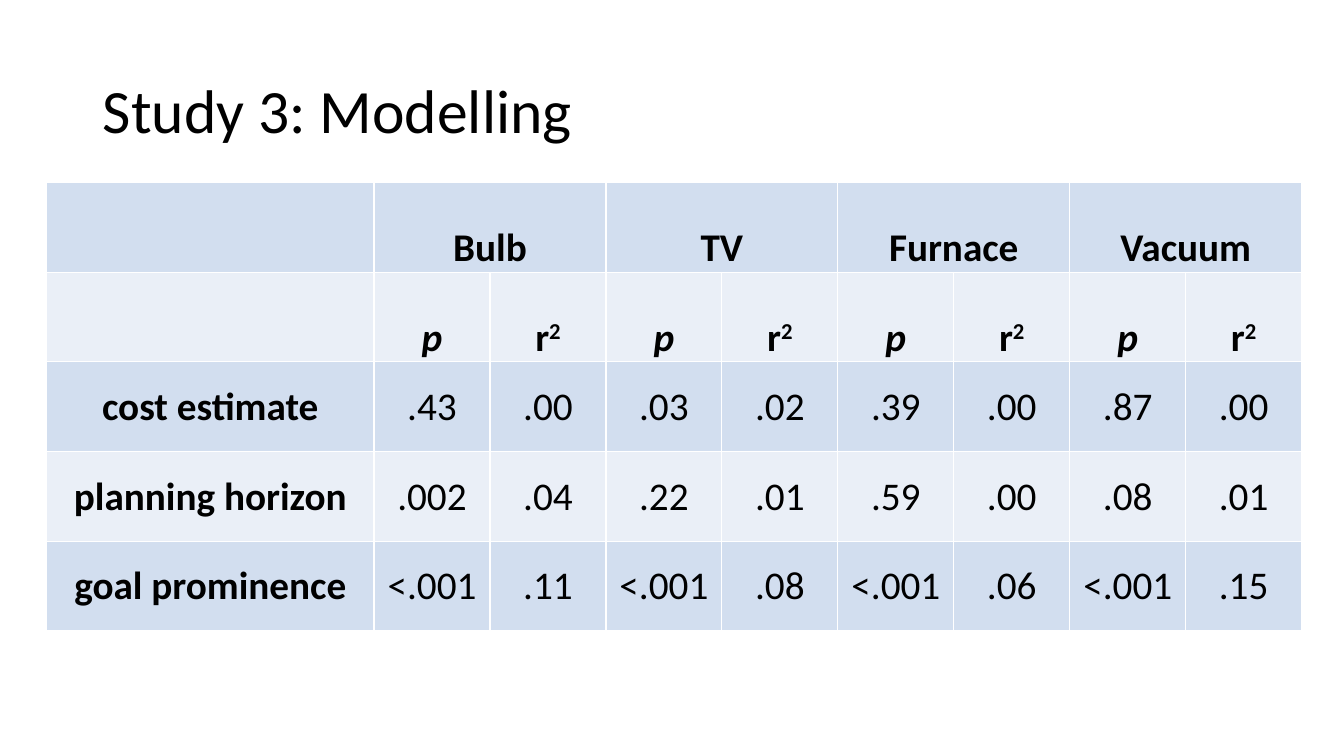
"""Build the Study 3 modelling slide with its table of p and r² values."""
from lxml.etree import SubElement
from pptx import Presentation
from pptx.dml.color import RGBColor
from pptx.enum.text import MSO_ANCHOR, PP_ALIGN
from pptx.oxml.ns import qn
from pptx.util import Pt

PX = 9144
COLORS = {"text": "000000", "border": "FFFFFF", "odd": "D2DEEF", "even": "EAEFF7"}
PRODUCTS = ["Bulb", "TV", "Furnace", "Vacuum"]
RESULTS = [
    ["cost estimate", ".43", ".00", ".03", ".02", ".39", ".00", ".87", ".00"],
    ["planning horizon", ".002", ".04", ".22", ".01", ".59", ".00", ".08", ".01"],
    ["goal prominence", "<.001", ".11", "<.001", ".08", "<.001", ".06", "<.001", ".15"],
]


def write(frame, text, size=28, bold=False, italic=False, raised=False, align=PP_ALIGN.CENTER):
    paragraph = frame.paragraphs[0]
    paragraph.alignment = align
    run = paragraph.add_run()
    run.text = text
    font = run.font
    font.name, font.size, font.bold, font.italic = "Calibri", Pt(size), bold, italic
    font.color.rgb = RGBColor.from_string(COLORS["text"])
    if raised:
        run._r.get_or_add_rPr().set("baseline", "30000")
    return paragraph


presentation = Presentation()
presentation.slide_width, presentation.slide_height = 1333 * PX, 750 * PX
slide = presentation.slides.add_slide(presentation.slide_layouts[5])

heading = slide.shapes.title
heading.left, heading.top, heading.width, heading.height = 92 * PX, 40 * PX, 1150 * PX, 145 * PX
heading.text_frame.vertical_anchor = MSO_ANCHOR.MIDDLE
write(heading.text_frame, "Study 3: Modelling", size=44, align=PP_ALIGN.LEFT).line_spacing = 0.9

header_rows = [
    [""] + [label for product in PRODUCTS for label in (product, "")],
    [""] + ["p", "r"] * len(PRODUCTS),
]
rows = header_rows + RESULTS
results = slide.shapes.add_table(
    len(rows), len(rows[0]), 46 * PX, 181 * PX, 1244 * PX, 445 * PX).table
results.first_row = results.horz_banding = False
for index, column in enumerate(results.columns):
    column.width = (115 if index else 325) * PX

for row_index, labels in enumerate(rows):
    results.rows[row_index].height = 89 * PX
    in_header = row_index < len(header_rows)
    for column_index, label in enumerate(labels):
        cell = results.cell(row_index, column_index)
        cell.margin_left = cell.margin_right = cell.margin_top = PX
        cell.margin_bottom = 0
        cell.vertical_anchor = MSO_ANCHOR.BOTTOM if in_header else MSO_ANCHOR.MIDDLE
        for side in ("lnL", "lnR", "lnT", "lnB"):
            border = SubElement(cell._tc.get_or_add_tcPr(), qn(f"a:{side}"), w=str(Pt(1)))
            SubElement(SubElement(border, qn("a:solidFill")), qn("a:srgbClr"), val=COLORS["border"])
        cell.fill.solid()
        cell.fill.fore_color.rgb = RGBColor.from_string(COLORS["even" if row_index % 2 else "odd"])
        if label:
            write(cell.text_frame, label, bold=in_header or column_index == 0, italic=label == "p")
        if label == "r":
            write(cell.text_frame, "2", bold=True, raised=True)

for first in range(1, len(rows[0]), 2):
    results.cell(0, first).merge(results.cell(0, first + 1))

presentation.save("out.pptx")
